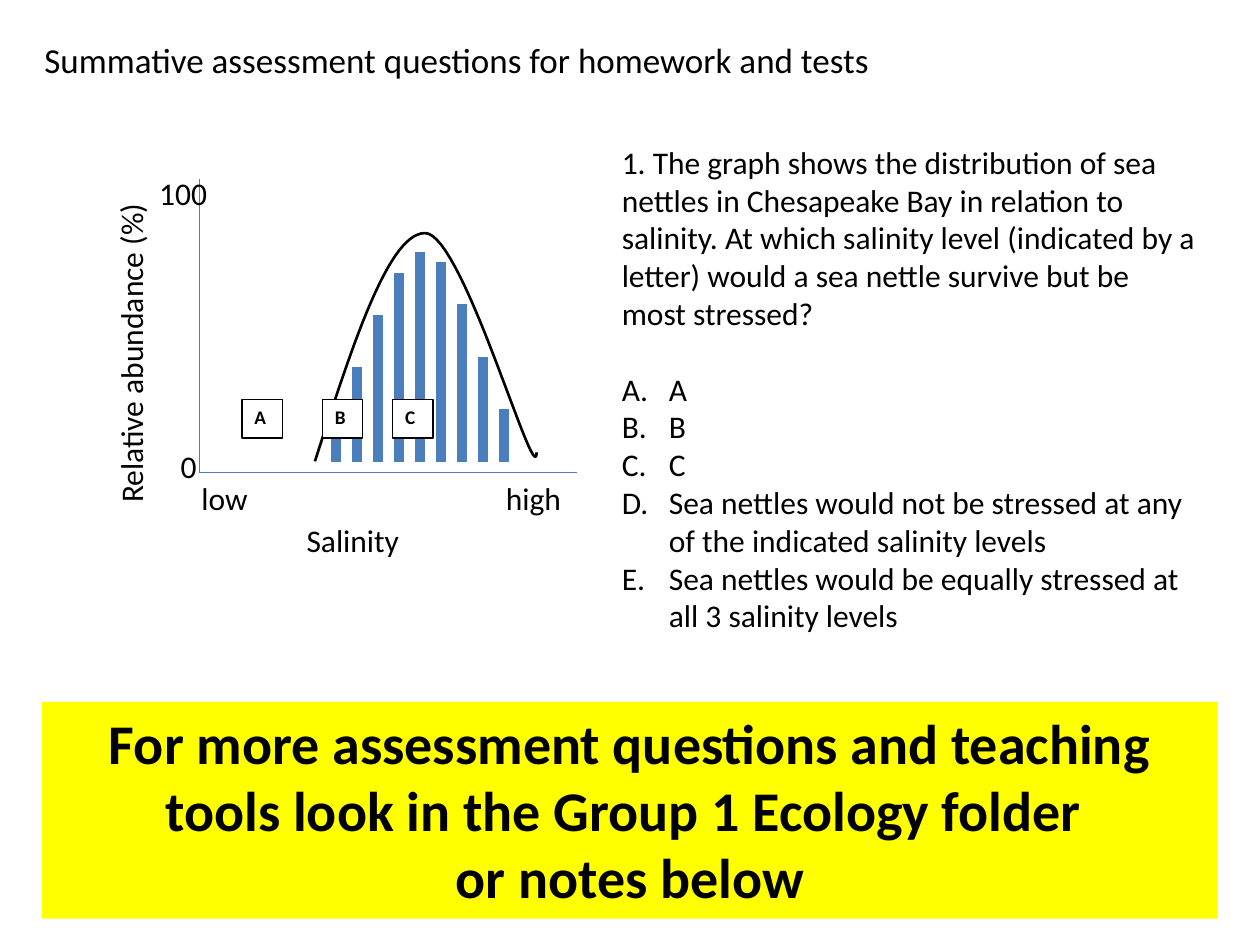
from lxml.etree import SubElement
from pptx import Presentation
from pptx.dml.color import RGBColor
from pptx.enum.shapes import MSO_CONNECTOR, MSO_SHAPE
from pptx.enum.text import MSO_ANCHOR, MSO_AUTO_SIZE, PP_ALIGN
from pptx.oxml.ns import qn
from pptx.util import Cm, Pt

BLACK = RGBColor(0, 0, 0)
WHITE = RGBColor(255, 255, 255)
BLUE = RGBColor(0x4B, 0x7E, 0xBC)
YELLOW = RGBColor(255, 255, 0)

TITLE = "Summative assessment questions for homework and tests"
QUESTION = ("1. The graph shows the distribution of sea nettles in Chesapeake Bay in relation to "
            "salinity. At which salinity level (indicated by a letter) would a sea nettle survive "
            "but be most stressed?")
ANSWERS = ["A", "B", "C",
           "Sea nettles would not be stressed at any of the indicated salinity levels",
           "Sea nettles would be equally stressed at all 3 salinity levels"]
BANNER = ["For more assessment questions and teaching tools look in the Group 1 Ecology folder ",
          "or notes below"]

# All lengths are in centimetres
AXES = [(4.02, 3.6, 4.02, 9.53), (4.02, 9.53, 11.64, 9.53)]
AXIS_TEXTS = [  # text, box, rotation
    ("Salinity", (5.93, 10.37, 3.81, 1.02), 0),
    ("Relative abundance (%)", (-0.86, 6.38, 6.99, 1.02), 270),
    ("low", (3.81, 9.53, 1.91, 1.02), 0),
    ("high", (9.95, 9.53, 1.7, 1.02), 0),
    ("0", (3.39, 8.89, 1.27, 1.02), 0),
    ("100", (2.96, 3.39, 1.48, 1.02), 0),
]
BAR_HEIGHTS = [0.85, 1.91, 2.96, 3.81, 4.23, 4.02, 3.18, 2.12, 1.06]
BAR_LEFT, BAR_STEP, BAR_BASE = 6.77, 1.27 / 3, 9.31
CURVE_START = (6.35, 9.3)
CURVE = [((7.09, 7.01), (7.82, 4.72), (8.56, 4.7)),
         ((9.32, 4.65), (10.8, 9.96), (10.82, 9.12))]
CURVE_STEPS = 30
LETTERS = {"A": 4.88, "B": 6.5, "C": 7.92}
LETTER_TOP, LETTER_SIZE = 8.05, (0.81, 0.78)


def place(sp, box):
    for name, value in zip(("left", "top", "width", "height"), box):
        setattr(sp, name, Cm(value))


def write(sp, texts, size, bold=False, align=PP_ALIGN.LEFT, after=0):
    tf = sp.text_frame
    for name, value in dict(word_wrap=True, auto_size=MSO_AUTO_SIZE.NONE,
                            vertical_anchor=MSO_ANCHOR.TOP).items():
        setattr(tf, name, value)
    for i, text in enumerate(texts):
        p = tf.add_paragraph() if i else tf.paragraphs[0]
        for name, value in dict(alignment=align, space_before=Pt(0),
                                space_after=Pt(after)).items():
            setattr(p, name, value)
        r = p.add_run()
        r.text = text
        for name, value in dict(name="Calibri", size=Pt(size), bold=bold).items():
            setattr(r.font, name, value)
        r.font.color.rgb = BLACK
    return tf


def set_bullet(p, numbered):
    pPr = p._p.get_or_add_pPr()
    indent = Cm(0.95) if numbered else 0
    pPr.set("marL", str(indent))
    pPr.set("indent", str(-indent))
    if numbered:
        SubElement(pPr, qn("a:buFont")).set("typeface", "+mj-lt")
        SubElement(pPr, qn("a:buAutoNum")).set("type", "alphaUcPeriod")
    else:
        SubElement(pPr, qn("a:buNone"))


def add_line(shapes, ends, width):
    s = shapes.add_connector(MSO_CONNECTOR.STRAIGHT, *map(Cm, ends))
    s.line.color.rgb = BLUE
    s.line.width = Pt(width)
    SubElement(s._element.spPr, qn("a:effectLst"))


def add_curve(shapes):
    points, start = [], CURVE_START
    for c1, c2, end in CURVE:
        for i in range(1, CURVE_STEPS + 1):
            t = i / CURVE_STEPS
            u = 1 - t
            points.append([Cm(u**3 * a + 3 * u * u * t * b + 3 * u * t * t * c + t**3 * d)
                           for a, b, c, d in zip(start, c1, c2, end)])
        start = end
    builder = shapes.build_freeform(*map(Cm, CURVE_START))
    builder.add_line_segments(points, close=False)
    s = builder.convert_to_shape()
    s.shadow.inherit = False
    s.fill.background()
    s.line.color.rgb = BLACK
    s.line.width = Pt(1.5)


def add_box(shapes, box, fill, border=None):
    s = shapes.add_shape(MSO_SHAPE.RECTANGLE, *map(Cm, box))
    s.shadow.inherit = False
    s.fill.solid()
    s.fill.fore_color.rgb = fill
    if border is None:
        s.line.fill.background()
    else:
        s.line.color.rgb = border
        s.line.width = Pt(0.75)
    return s


def main():
    prs = Presentation()
    prs.slide_width, prs.slide_height = Cm(25.4), Cm(19.05)
    slide = prs.slides.add_slide(prs.slide_layouts[1])
    title, body = slide.placeholders

    place(title, (0.64, 0.64, 19.48, 1.12))
    write(title, [TITLE], 20)

    graph = slide.shapes.add_group_shape().shapes
    for ends in AXES:
        add_line(graph, ends, 0.75)
    add_curve(graph)
    for text, box, rotation in AXIS_TEXTS:
        s = graph.add_textbox(*map(Cm, box))
        s.rotation = rotation
        write(s, [text], 18)
    for i, height in enumerate(BAR_HEIGHTS):
        x = BAR_LEFT + i * BAR_STEP
        add_line(graph, (x, BAR_BASE - height, x, BAR_BASE), 6)

    for letter, left in LETTERS.items():
        s = add_box(slide.shapes, (left, LETTER_TOP, *LETTER_SIZE), WHITE, BLACK)
        write(s, [letter], 11, bold=True, after=10)

    place(body, (12.28, 2.75, 12.07, 11.02))
    paragraphs = write(body, [QUESTION, *ANSWERS], 18).paragraphs
    paragraphs[1].space_before = Pt(21.6)
    for i, p in enumerate(paragraphs):
        set_bullet(p, numbered=i > 0)

    banner = add_box(slide.shapes, (0.85, 14.15, 23.7, 4.37), YELLOW)
    write(banner, BANNER, 32, bold=True, align=PP_ALIGN.CENTER)

    prs.save("out.pptx")


if __name__ == "__main__":
    main()
